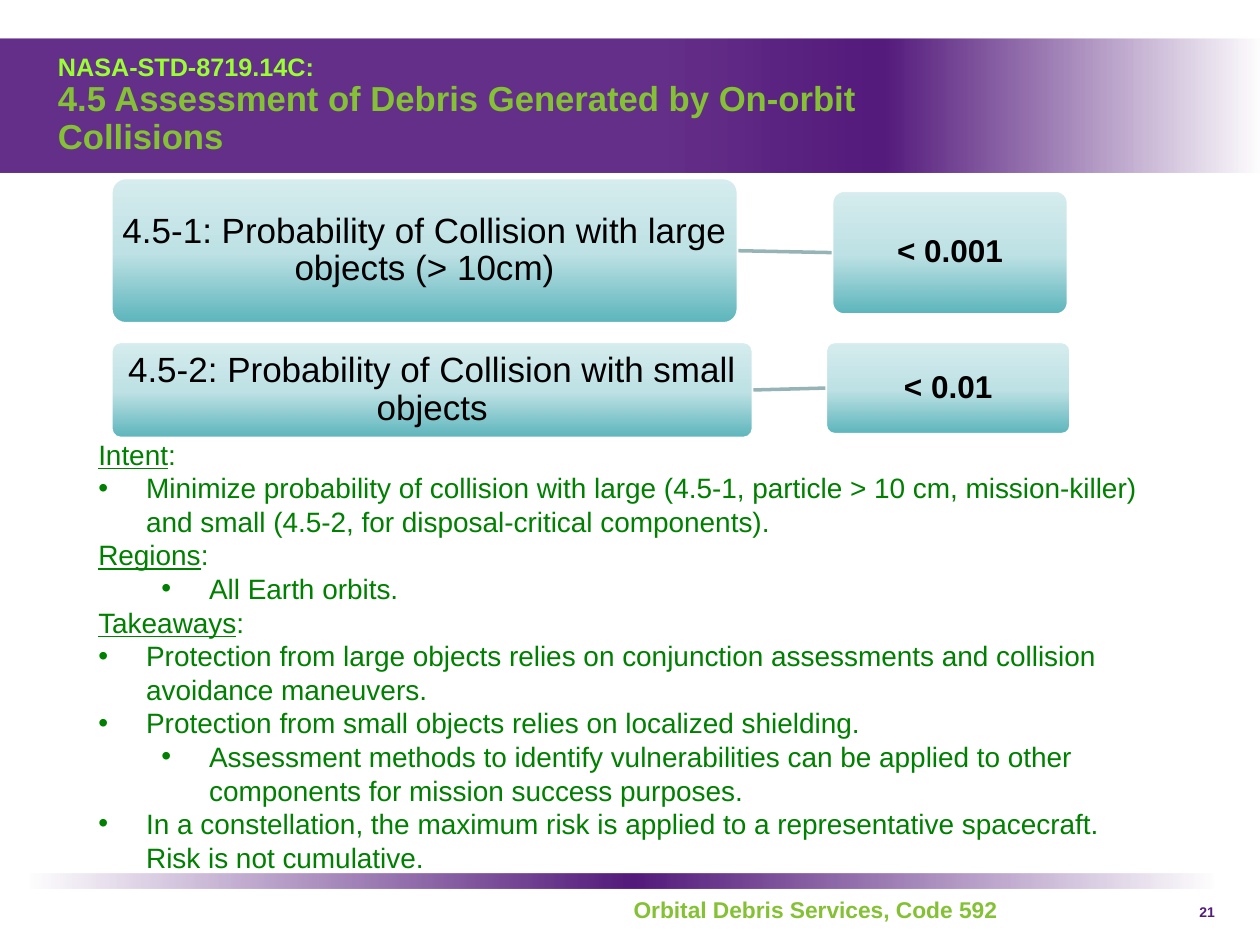
from lxml.etree import SubElement
from pptx import Presentation
from pptx.dml.color import RGBColor
from pptx.enum.shapes import MSO_CONNECTOR, MSO_SHAPE
from pptx.enum.text import MSO_ANCHOR, MSO_AUTO_SIZE, PP_ALIGN
from pptx.oxml.ns import qn
from pptx.util import Inches, Pt

COLORS = {
    "purple": "541A7C", "lime": "99FF33", "green": "84C134", "body": "008000",
    "teal": "5AB4BB", "pale_teal": "BDE1E4", "ice": "D6ECEE",
    "link": "96B3B6", "white": "FFFFFF", "black": "000000",
}
FONT = "Arial"
HEADING, BULLET, SUB_BULLET = range(3)

# Gradient stops: position %, colour name, opacity %
HEADER_STOPS = [(53, "purple", 90), (70, "purple", 100), (100, "purple", 0)]
FOOTER_STOPS = [(0, "purple", 0), (51, "purple", 100), (100, "purple", 0)]
BOX_STOPS = [(0, "teal", 100), (48, "pale_teal", 100), (100, "ice", 100)]

# Requirement box and limit box: left, top, width, height
REQUIREMENTS = [
    ("4.5-1: Probability of Collision with large objects (> 10cm)",
     (0.88, 1.41, 4.98, 1.16), "< 0.001", (6.6, 1.51, 1.88, 0.99)),
    ("4.5-2: Probability of Collision with small objects",
     (0.88, 2.71, 5.1, 0.77), "< 0.01", (6.55, 2.71, 1.95, 0.74)),
]

BODY = [
    (HEADING, "Intent"),
    (BULLET, "Minimize probability of collision with large (4.5-1, particle > 10 cm, "
             "mission-killer) and small (4.5-2, for disposal-critical components)."),
    (HEADING, "Regions"),
    (SUB_BULLET, "All Earth orbits."),
    (HEADING, "Takeaways"),
    (BULLET, "Protection from large objects relies on conjunction assessments and "
             "collision avoidance maneuvers."),
    (BULLET, "Protection from small objects relies on localized shielding."),
    (SUB_BULLET, "Assessment methods to identify vulnerabilities can be applied to other "
                 "components for mission success purposes."),
    (BULLET, "In a constellation, the maximum risk is applied to a representative "
             "spacecraft. Risk is not cumulative."),
]


class SlideBuilder:
    """Holds the style and the current slide."""

    def __init__(self, slide):
        self.slide = slide
        self.shapes = slide.shapes

    def color(self, name):
        return RGBColor.from_string(COLORS[name])

    def style(self, font, size, color, bold=False):
        font.name, font.size, font.bold = FONT, Pt(size), bold
        font.color.rgb = self.color(color)

    def place(self, shape, box):
        shape.left, shape.top, shape.width, shape.height = map(Inches, box)

    def gradient(self, shape, stops, angle):
        shape.fill.gradient()
        fill = shape.element.spPr.find(qn("a:gradFill"))
        for child in list(fill):
            fill.remove(child)
        stop_list = SubElement(fill, qn("a:gsLst"))
        for position, name, opacity in stops:
            stop = SubElement(stop_list, qn("a:gs"), pos=str(position * 1000))
            color = SubElement(stop, qn("a:srgbClr"), val=COLORS[name])
            if opacity < 100:
                SubElement(color, qn("a:alpha"), val=str(opacity * 1000))
        SubElement(fill, qn("a:lin"), ang=str(angle * 60000), scaled="0")

    def band(self, box, stops):
        shape = self.shapes.add_shape(MSO_SHAPE.RECTANGLE, *map(Inches, box))
        shape.shadow.inherit = False
        shape.line.fill.background()
        self.gradient(shape, stops, 0)
        self.shapes.element.insert(2, shape.element)  # behind the placeholders

    def title(self, box, lines):
        shape = self.shapes.title
        self.place(shape, box)
        frame = shape.text_frame
        frame.vertical_anchor = MSO_ANCHOR.MIDDLE
        frame.auto_size = MSO_AUTO_SIZE.NONE
        paragraph = frame.paragraphs[0]
        paragraph.alignment = PP_ALIGN.LEFT
        paragraph.line_spacing = 0.9
        for index, (text, size, color) in enumerate(lines):
            if index:
                paragraph.add_line_break()
            run = paragraph.add_run()
            run.text = text
            self.style(run.font, size, color, bold=True)

    def body(self, box, items):
        shape = self.slide.placeholders[1]
        self.place(shape, box)
        frame = shape.text_frame
        frame.auto_size = MSO_AUTO_SIZE.SHAPE_TO_FIT_TEXT
        for index, (kind, text) in enumerate(items):
            paragraph = frame.add_paragraph() if index else frame.paragraphs[0]
            paragraph.level = int(kind == SUB_BULLET)
            self.bullet(paragraph, kind)
            paragraph.space_before = Pt(0)
            self.style(paragraph.font, 16, "body")
            run = paragraph.add_run()
            run.text = text
            if kind == HEADING:
                run.font.underline = True
                paragraph.add_run().text = ":"

    def bullet(self, paragraph, kind):
        properties = paragraph._p.get_or_add_pPr()
        margin = {HEADING: 0, BULLET: 0.38, SUB_BULLET: 0.88}[kind]
        properties.set("marL", str(Inches(margin)))
        properties.set("indent", str(Inches(0 if kind == HEADING else -0.38)))
        if kind == HEADING:
            SubElement(properties, qn("a:buNone"))
        else:
            SubElement(properties, qn("a:buFont"), typeface=FONT)
            SubElement(properties, qn("a:buChar"), char="•")

    def rounded_box(self, box, text, size, bold=False):
        shape = self.shapes.add_shape(MSO_SHAPE.ROUNDED_RECTANGLE, *map(Inches, box))
        shape.adjustments[0] = 0.1
        shape.shadow.inherit = False
        self.gradient(shape, BOX_STOPS, 270)
        shape.line.color.rgb = self.color("white")
        shape.line.width = Pt(2)
        frame = shape.text_frame
        frame.word_wrap = True
        frame.vertical_anchor = MSO_ANCHOR.MIDDLE
        frame.margin_left = frame.margin_right = Inches(0.01)
        frame.margin_top = frame.margin_bottom = Inches(0.01)
        paragraph = frame.paragraphs[0]
        paragraph.text = text
        paragraph.alignment = PP_ALIGN.CENTER
        paragraph.line_spacing = 0.9
        self.style(paragraph.font, size, "black", bold)
        return shape

    def link(self, start, end):
        connector = self.shapes.add_connector(MSO_CONNECTOR.STRAIGHT, 0, 0, 0, 0)
        connector.begin_connect(start, 3)
        connector.end_connect(end, 1)
        connector.line.color.rgb = self.color("link")
        connector.line.width = Pt(2)
        SubElement(connector.element.spPr, qn("a:effectLst"))

    def label(self, box, text, size, color, alignment=PP_ALIGN.LEFT):
        frame = self.shapes.add_textbox(*map(Inches, box)).text_frame
        frame.word_wrap = True
        paragraph = frame.paragraphs[0]
        paragraph.text = text
        paragraph.alignment = alignment
        self.style(paragraph.font, size, color, bold=True)


def main():
    presentation = Presentation()
    presentation.slide_width, presentation.slide_height = Inches(10), Inches(7.5)
    builder = SlideBuilder(presentation.slides.add_slide(presentation.slide_layouts[1]))

    # Header and footer bands
    builder.band((0, 0.31, 10, 1.06), HEADER_STOPS)
    builder.band((0.23, 6.93, 9.41, 0.12), FOOTER_STOPS)

    # Title and body
    builder.title((0.36, 0.57, 7.03, 0.54), [
        ("NASA-STD-8719.14C:", 14.4, "lime"),
        ("4.5 Assessment of Debris Generated by On-orbit Collisions", 19.8, "green"),
    ])
    builder.body((0.68, 3.42, 8.45, 3.6), BODY)

    # Requirements joined to their limits
    for requirement, requirement_box, limit, limit_box in REQUIREMENTS:
        requirement_shape = builder.rounded_box(requirement_box, requirement, 20)
        limit_shape = builder.rounded_box(limit_box, limit, 18, bold=True)
        builder.link(requirement_shape, limit_shape)

    # Footer text
    builder.label((4.93, 7.06, 3.22, 0.36), "Orbital Debris Services, Code 592", 13, "green")
    builder.label((9.35, 7.12, 0.39, 0.25), "21", 8, "purple", PP_ALIGN.RIGHT)

    presentation.save("out.pptx")


if __name__ == "__main__":
    main()
